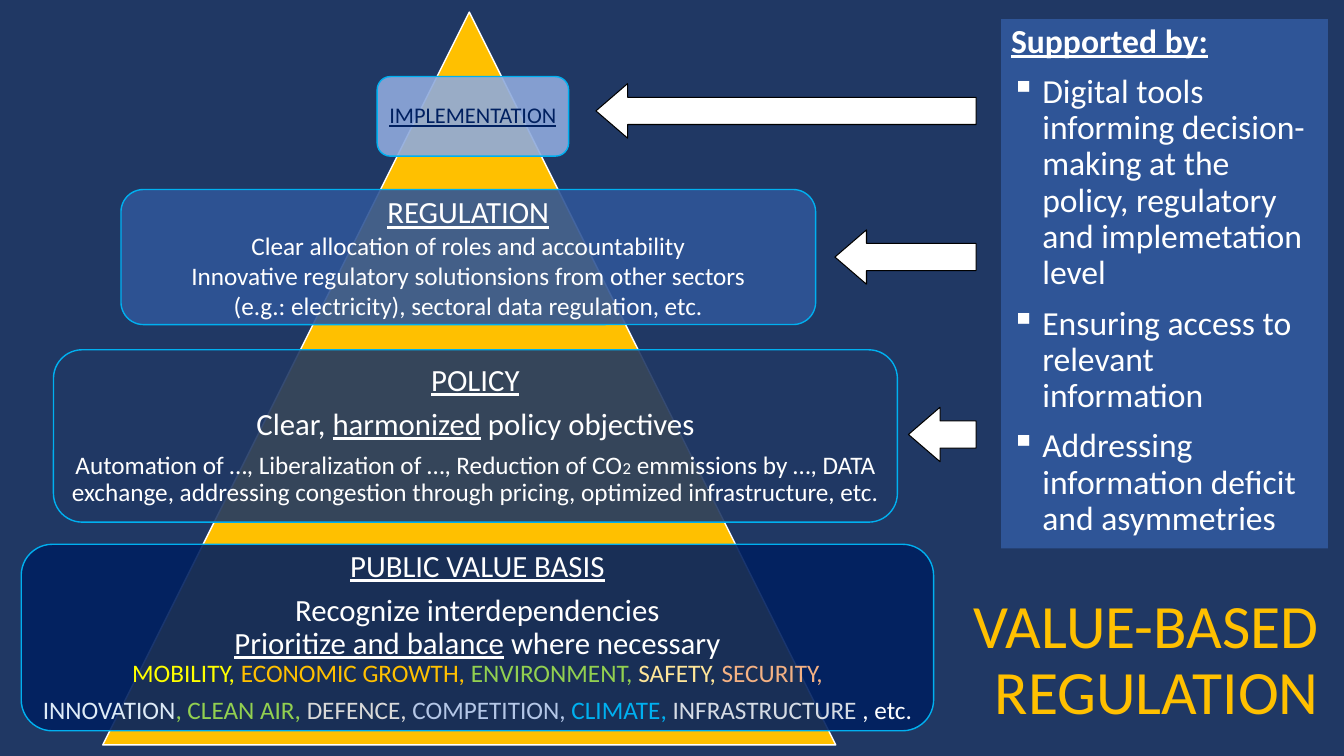
import dataclasses

import lxml.etree
import pptx
import pptx.dml.color
import pptx.enum.shapes
import pptx.enum.text
import pptx.oxml.ns
import pptx.util

RGB = pptx.dml.color.RGBColor
SHAPES = pptx.enum.shapes.MSO_SHAPE
ALIGN = pptx.enum.text.PP_ALIGN
ANCHOR = pptx.enum.text.MSO_ANCHOR

NIGHT = RGB(0x20, 0x38, 0x64)
NAVY = RGB(0x00, 0x20, 0x60)
BLUE = RGB(0x2F, 0x55, 0x97)
PERIWINKLE = RGB(0x8F, 0xAA, 0xDC)
SKY = RGB(0x00, 0xB0, 0xF0)
GOLD = RGB(0xFF, 0xC0, 0x00)
WHITE = RGB(0xFF, 0xFF, 0xFF)
BLACK = RGB(0x00, 0x00, 0x00)
YELLOW = RGB(0xFF, 0xFF, 0x00)
GREEN = RGB(0x92, 0xD0, 0x50)
CREAM = RGB(0xFF, 0xE6, 0x99)
PEACH = RGB(0xF4, 0xB1, 0x83)
ICE = RGB(0xDE, 0xEB, 0xF7)
SILVER = RGB(0xD9, 0xD9, 0xD9)
LAVENDER = RGB(0xB4, 0xC7, 0xE7)
MIST = RGB(0xD6, 0xDC, 0xE5)


@dataclasses.dataclass
class Span:
    text: str
    size: float = 22
    color: RGB = WHITE
    underline: bool = False
    bold: bool = False


@dataclasses.dataclass
class Para:
    spans: list
    align: ALIGN = ALIGN.CENTER
    spacing: float = 0.9
    before: float = 0
    after: float = 0
    bullet: str = ""


class Painter:
    """Places elements on a grid of 100 columns by 100 rows."""

    font = "Calibri"
    indent = pptx.util.Inches(0.31)

    def __init__(self, deck, background):
        self.column = deck.slide_width / 100
        self.row = deck.slide_height / 100
        self.page = deck.slides.add_slide(deck.slide_layouts[6])
        self.page.background.fill.solid()
        self.page.background.fill.fore_color.rgb = background

    def frame(self, left, top, width, height):
        return (round(left * self.column), round(top * self.row),
                round(width * self.column), round(height * self.row))

    def shape(self, kind, place, fill, line=None, weight=1.0, opacity=100):
        shape = self.page.shapes.add_shape(kind, *self.frame(*place))
        shape.shadow.inherit = False
        shape.fill.solid()
        shape.fill.fore_color.rgb = fill
        if opacity < 100:
            color = shape._element.spPr.find(".//" + pptx.oxml.ns.qn("a:srgbClr"))
            alpha = lxml.etree.SubElement(color, pptx.oxml.ns.qn("a:alpha"))
            alpha.set("val", str(opacity * 1000))
        if line is None:
            shape.line.fill.background()
        else:
            shape.line.color.rgb = line
            shape.line.width = pptx.util.Pt(weight)
        return shape

    def add_text(self, box, paras, anchor, inset=None):
        frame = box.text_frame
        frame.word_wrap = True
        frame.vertical_anchor = anchor
        if inset is not None:
            frame.margin_left = frame.margin_right = pptx.util.Inches(inset)
            frame.margin_top = frame.margin_bottom = pptx.util.Inches(inset)
        for index, para in enumerate(paras):
            target = frame.add_paragraph() if index else frame.paragraphs[0]
            target.alignment = para.align
            target.line_spacing = para.spacing
            target.space_before = pptx.util.Pt(para.before)
            target.space_after = pptx.util.Pt(para.after)
            if para.bullet:
                self.bullet(target, para.bullet)
            for span in para.spans:
                run = target.add_run()
                run.text = span.text
                run.font.name = self.font
                run.font.size = pptx.util.Pt(span.size)
                run.font.color.rgb = span.color
                run.font.underline = span.underline
                run.font.bold = span.bold

    def bullet(self, target, mark):
        properties = target._p.get_or_add_pPr()
        properties.set("marL", str(self.indent))
        properties.set("indent", str(-self.indent))
        lxml.etree.SubElement(properties, pptx.oxml.ns.qn("a:buChar")).set("char", mark)

    def level(self, place, fill, paras, inset=0.09):
        box = self.shape(SHAPES.ROUNDED_RECTANGLE, place, fill, SKY, opacity=90)
        self.add_text(box, paras, ANCHOR.MIDDLE, inset)

    def arrow(self, left, top, right=72.62, height=7.2):
        place = (left, top, right - left, height)
        arrow = self.shape(SHAPES.RIGHT_ARROW, place, WHITE, BLACK, 0.75)
        arrow.rotation = 180
        arrow.adjustments[0] = 0.5
        arrow.adjustments[1] = 0.58

    def title(self, place, text):
        box = self.page.shapes.add_textbox(*self.frame(*place))
        self.add_text(box, [Para([Span(text, 44, GOLD)], ALIGN.RIGHT)], ANCHOR.BOTTOM)


def heading(text, **style):
    return Para([Span(text, underline=True)], **style)


def colored(*words):
    return Para([Span(text, 18, color) for text, color in words], after=6.3)


def main():
    deck = pptx.Presentation()
    deck.slide_width = pptx.util.Inches(13.33)
    deck.slide_height = pptx.util.Inches(7.5)
    painter = Painter(deck, NIGHT)

    painter.title((69.47, 77.2, 29.41, 19.73), "VALUE-BASED REGULATION")

    # Pyramid and its four levels
    painter.shape(SHAPES.ISOSCELES_TRIANGLE, (7.65, 1.6, 54.54, 96.93), GOLD, WHITE)
    painter.level((28.06, 10.13, 14.25, 10.53), PERIWINKLE, [
        Para([Span("IMPLEMENTATION", 16, NAVY, underline=True)], after=5.6),
    ], inset=0.07)
    painter.level((9, 25.07, 51.69, 17.87), BLUE, [
        heading("REGULATION", spacing=1.0),
        *[Para([Span(text, 18)], spacing=1.0) for text in (
            "Clear allocation of roles and accountability",
            "Innovative regulatory solutionsions from other sectors",
            "(e.g.: electricity), sectoral data regulation, etc.")],
    ])
    painter.level((3.98, 46.27, 62.79, 22.8), NIGHT, [
        heading("POLICY", after=7.7),
        Para([Span("Clear, "), Span("harmonized", underline=True),
              Span(" policy objectives")], after=7.7),
        Para([Span("Automation of …, Liberalization of …, Reduction of CO", 18),
              Span("2", 12),
              Span(" emmissions by …, DATA exchange, addressing congestion "
                   "through pricing, optimized infrastructure, etc.", 18)], after=6.3),
    ])
    painter.level((1.58, 72, 67.89, 24.67), NAVY, [
        heading("PUBLIC VALUE BASIS", after=7.7),
        Para([Span("Recognize interdependencies")]),
        Para([Span("Prioritize and balance", underline=True), Span(" where necessary")]),
        colored(("MOBILITY, ", YELLOW), ("ECONOMIC GROWTH, ", GOLD),
                ("ENVIRONMENT, ", GREEN), ("SAFETY, ", CREAM), ("SECURITY,", PEACH)),
        colored(("INNOVATION", ICE), (", CLEAN AIR, ", GREEN), ("DEFENCE, ", SILVER),
                ("COMPETITION, ", LAVENDER), ("CLIMATE, ", SKY),
                ("INFRASTRUCTURE ", MIST), (", etc.", WHITE)),
    ])

    # Support panel
    panel = painter.shape(SHAPES.RECTANGLE, (74.49, 2.53, 24.31, 70), BLUE)
    supports = (
        "Digital tools informing decision-making at the policy, regulatory "
        "and implemetation level",
        "Ensuring access to relevant information",
        "Addressing information deficit and asymmetries",
    )
    painter.add_text(panel, [
        Para([Span("Supported by:", 24, underline=True, bold=True)], ALIGN.LEFT, before=10),
        *[Para([Span(text, 24)], ALIGN.LEFT, before=10, bullet="▪") for text in supports],
    ], ANCHOR.TOP)

    # Arrows from the panel to the upper levels
    for left, top in ((44.34, 11.07), (62.12, 30.4), (67.59, 53.87)):
        painter.arrow(left, top)

    deck.save("out.pptx")


if __name__ == "__main__":
    main()
